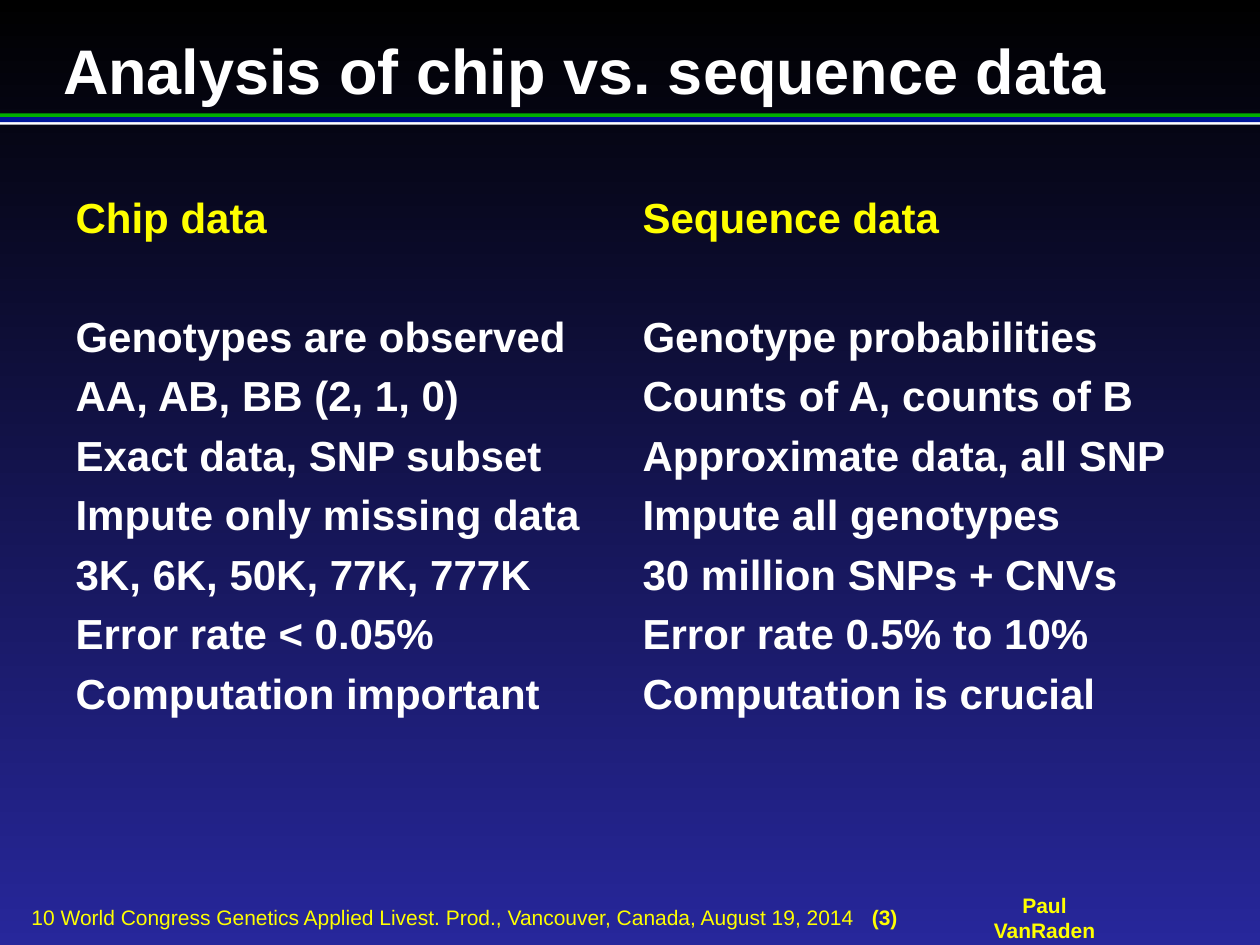
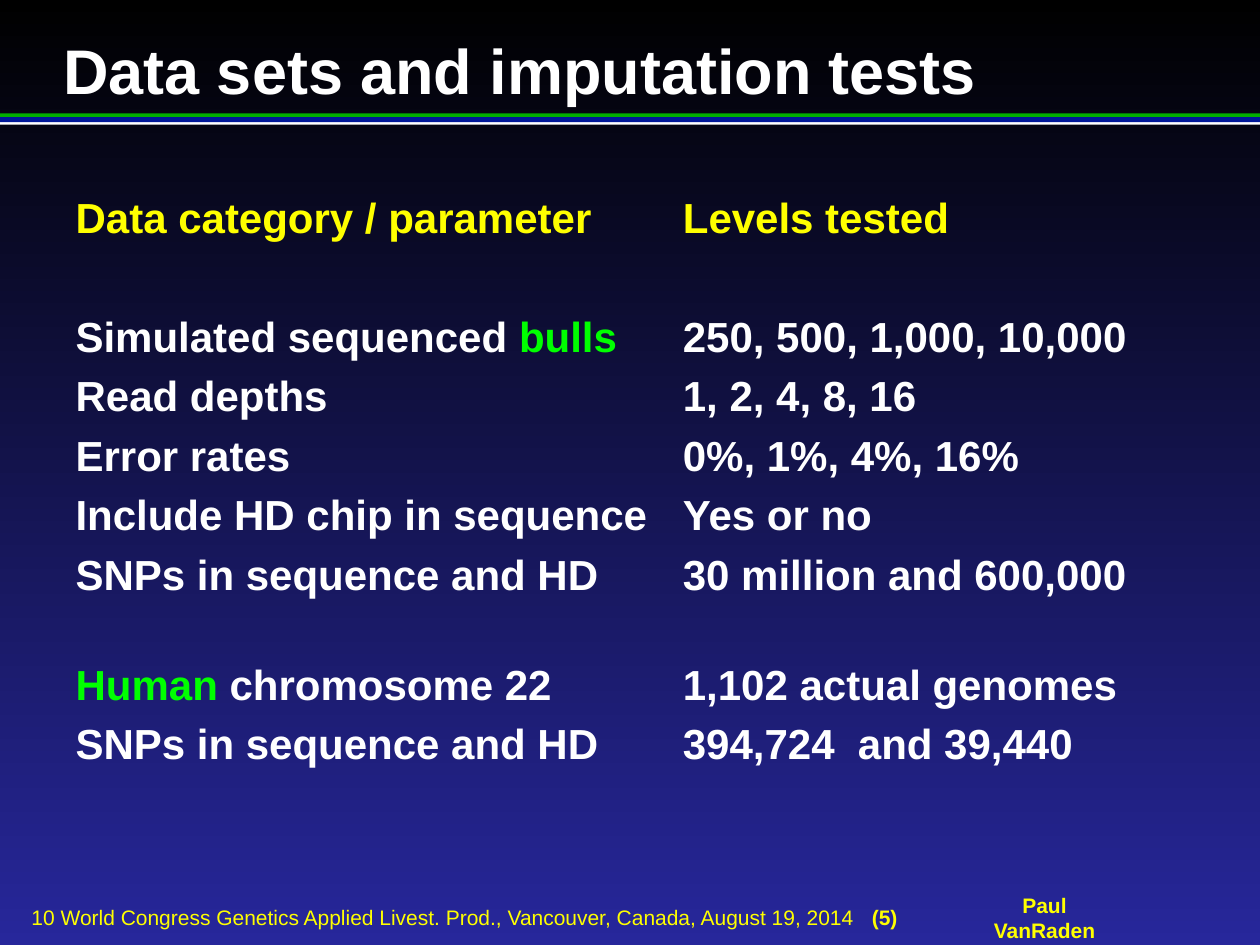
from lxml import etree
from pptx import Presentation
from pptx import util as u
from pptx.dml.color import RGBColor
from pptx.enum import shapes, text
from pptx.oxml import ns

WHITE, YELLOW, LIME = "FFFFFF", "FFFF00", "00FF00"
BACKGROUND = ("000000", "27279B")
BANDS = [(0.9, 0.03, "01AF00"), (0.96, 0.03, WHITE), (0.93, 0.04, "001799")]
VENUE = "10 World Congress Genetics Applied Livest. Prod., Vancouver, Canada, August 19, 2014"
AUTHOR = "Paul VanRaden"
PLAIN_TABLE = "{2D5ABB26-0587-4C30-8999-92F81FD0307C}"
ROW, GAP = 34, 29  # row heights in points

CHIP_VS_SEQUENCE = [
    ("Chip data", "Sequence data"),
    ROW,
    ("Genotypes are observed", "Genotype probabilities"),
    ("AA, AB, BB (2, 1, 0)", "Counts of A, counts of B"),
    ("Exact data, SNP subset", "Approximate data, all SNP"),
    ("Impute only missing data", "Impute all genotypes"),
    ("3K, 6K, 50K, 77K, 777K", "30 million SNPs + CNVs"),
    ("Error rate < 0.05%", "Error rate 0.5% to 10%"),
    ("Computation important", "Computation is crucial"),
]
IMPUTATION_TESTS = [
    ("Data category / parameter", "Levels tested"),
    ROW,
    ("Simulated sequenced *bulls*", "250, 500, 1,000, 10,000"),
    ("Read depths", "1, 2, 4, 8, 16"),
    ("Error rates", "0%, 1%, 4%, 16%"),
    ("Include HD chip in sequence", "Yes or no"),
    ("SNPs in sequence and HD", "30 million and 600,000"),
    GAP,
    ("*Human* chromosome 22", "1,102 actual genomes"),
    ("SNPs in sequence and HD", "394,724  and 39,440"),
]


def rgb(color):
    return RGBColor.from_string(color)


def set_all(target, values):
    for name, value in values.items():
        setattr(target, name, value)


class Deck:
    def __init__(self):
        self.prs = Presentation()
        self.prs.slide_width, self.prs.slide_height = u.Inches(10), u.Inches(7.5)
        fill = self.prs.slide_master.background.fill
        fill.gradient()
        fill.gradient_angle = 270
        for stop, color in zip(fill.gradient_stops, BACKGROUND):
            stop.color.rgb = rgb(color)

    def new_slide(self, heading, number):
        self.slide = self.prs.slides.add_slide(self.prs.slide_layouts[5])
        self.bands()
        self.footer(number)
        self.title(heading)

    def run(self, paragraph, words, size, color, bold=True):
        run = paragraph.add_run()
        run.text = words
        set_all(run.font, {"name": "Arial", "size": u.Pt(size), "bold": bold})
        run.font.color.rgb = rgb(color)

    def bands(self):
        for top, height, color in BANDS:
            band = self.slide.shapes.add_shape(
                shapes.MSO_SHAPE.RECTANGLE, 0, u.Inches(top), u.Inches(10), u.Inches(height))
            band.shadow.inherit = False
            band.fill.solid()
            band.fill.fore_color.rgb = rgb(color)
            band.line.fill.background()

    def frame(self, shape, anchor, margin_top=0):
        """Strip the insets of a text shape and return its first paragraph."""
        set_all(shape.text_frame, {
            "margin_left": 0, "margin_right": 0, "margin_bottom": 0,
            "margin_top": u.Inches(margin_top), "word_wrap": True,
            "vertical_anchor": anchor, "auto_size": text.MSO_AUTO_SIZE.NONE})
        return shape.text_frame.paragraphs[0]

    def footer_box(self, left, top, width, height):
        box = self.slide.shapes.add_textbox(*map(u.Inches, (left, top, width, height)))
        return self.frame(box, text.MSO_ANCHOR.MIDDLE)

    def footer(self, number):
        author = self.footer_box(7.79, 7.08, 1, 0.4)
        author.alignment = text.PP_ALIGN.CENTER
        self.run(author, AUTHOR, 12, YELLOW)

        venue = self.footer_box(0.25, 7.18, 7.27, 0.2)
        tabs = etree.SubElement(venue._p.get_or_add_pPr(), ns.qn("a:tabLst"))
        etree.SubElement(tabs, ns.qn("a:tab"), pos=str(u.Inches(6.67)), algn="l")
        self.run(venue, VENUE + "\t", 12, YELLOW, bold=False)
        self.run(venue, f"({number})", 12, YELLOW)

    def title(self, heading):
        title = self.slide.shapes.title
        set_all(title, {"left": u.Inches(0.5), "top": u.Inches(0.2),
                        "width": u.Inches(9), "height": u.Inches(0.6)})
        paragraph = self.frame(title, text.MSO_ANCHOR.TOP, 0.05)
        paragraph.alignment = text.PP_ALIGN.LEFT
        self.run(paragraph, heading, 36, WHITE)

    def table(self, rows, widths):
        """Fill a two-column table; a number in rows is an empty row of that height."""
        heights = [ROW if isinstance(row, tuple) else row for row in rows]
        table = self.slide.shapes.add_table(
            len(rows), len(widths), u.Inches(0.5), u.Inches(1.5),
            u.Inches(sum(widths)), u.Pt(sum(heights))).table
        set_all(table, {"first_row": False, "horz_banding": False})
        table._tbl.tblPr.find(ns.qn("a:tableStyleId")).text = PLAIN_TABLE
        for column, width in zip(table.columns, widths):
            column.width = u.Inches(width)
        for index, (row, height) in enumerate(zip(rows, heights)):
            table.rows[index].height = u.Pt(height)
            for col in range(len(widths)):
                cell = table.cell(index, col)
                cell.fill.background()
                set_all(cell, {"margin_top": u.Inches(0.04), "margin_bottom": u.Inches(0.04),
                               "vertical_anchor": text.MSO_ANCHOR.MIDDLE})
                if isinstance(row, tuple):
                    self.cell_text(cell, row[col], WHITE if index else YELLOW)

    def cell_text(self, cell, words, color):
        """Write words, with the parts between asterisks in lime."""
        for index, part in enumerate(words.split("*")):
            if part:
                self.run(cell.text_frame.paragraphs[0], part, 24, LIME if index % 2 else color)


def main():
    deck = Deck()
    deck.new_slide("Analysis of chip vs. sequence data", 3)
    deck.table(CHIP_VS_SEQUENCE, (4.5, 4.5))
    deck.new_slide("Data sets and imputation tests", 5)
    deck.table(IMPUTATION_TESTS, (4.82, 4.18))
    deck.prs.save("out.pptx")


if __name__ == "__main__":
    main()
